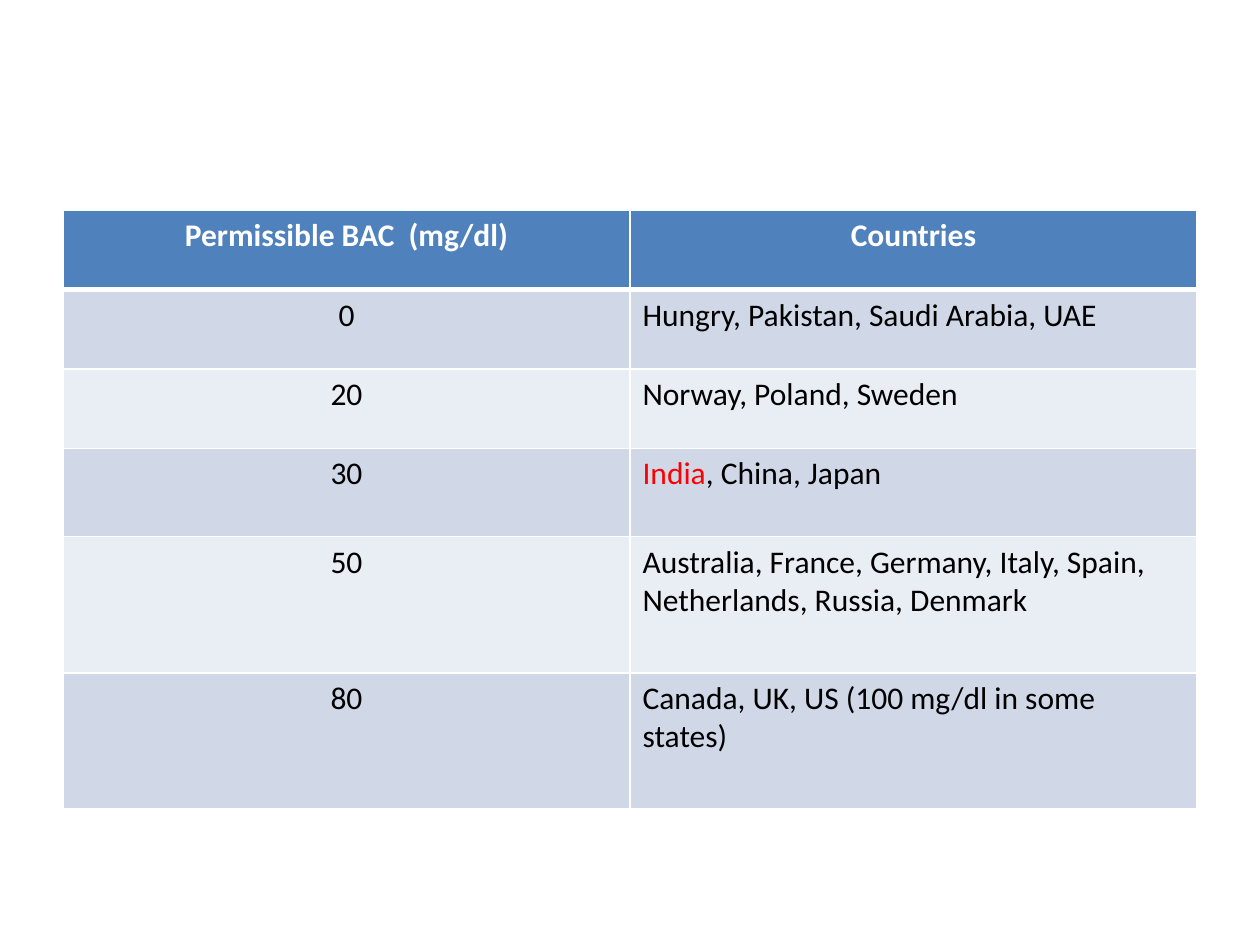
from lxml import etree
from pptx import Presentation
from pptx import util as u
from pptx.dml.color import RGBColor
from pptx.enum import text
from pptx.oxml.ns import qn

WHITE = RGBColor(0xFF, 0xFF, 0xFF)
BLACK = RGBColor(0x00, 0x00, 0x00)
RED = RGBColor(0xFF, 0x00, 0x00)
HEADER_BLUE = RGBColor(0x4F, 0x81, 0xBD)
BANDS = (RGBColor(0xE9, 0xED, 0xF4), RGBColor(0xD0, 0xD8, 0xE8))

HIGHLIGHT = "India"
LIMITS = [
    ("Permissible BAC  (mg/dl)", "Countries"),
    ("0", "Hungry, Pakistan, Saudi Arabia, UAE"),
    ("20", "Norway, Poland, Sweden"),
    ("30", "India, China, Japan"),
    ("50", "Australia, France, Germany, Italy, Spain, Netherlands, Russia, Denmark"),
    ("80", "Canada, UK, US (100 mg/dl in some states)"),
]
ROW_HEIGHTS = (0.63, 0.63, 0.63, 0.7, 1.08, 1.08)
SLIDE_WIDTH, SLIDE_HEIGHT = 10, 7.5
MARGIN, TOP = 0.05 * SLIDE_WIDTH, 1.67


def add_border(cell, side, points):
    """Draw one white edge of a table cell."""
    edge = etree.SubElement(cell._tc.get_or_add_tcPr(), qn(f"a:{side}"), w=str(u.Pt(points)))
    paint = etree.SubElement(edge, qn("a:solidFill"))
    etree.SubElement(paint, qn("a:srgbClr"), val=str(WHITE))


def write(paragraph, wording, color=BLACK, bold=False, size=18, font="Calibri"):
    """Append formatted wording to a paragraph."""
    run = paragraph.add_run()
    run.text = wording
    run.font.name = font
    run.font.size = u.Pt(size)
    run.font.bold = bold
    run.font.color.rgb = color


def fill_cell(cell, wording, row, column):
    """Style one cell by its place in the table and write its wording."""
    header = row == 0
    for side, points in (("lnL", 1), ("lnR", 1),
                         ("lnT", 3 if row == 1 else 1), ("lnB", 3 if header else 1)):
        add_border(cell, side, points)
    cell.fill.solid()
    cell.fill.fore_color.rgb = HEADER_BLUE if header else BANDS[row % 2]
    paragraph = cell.text_frame.paragraphs[0]
    centered = header or column == 0
    paragraph.alignment = text.PP_ALIGN.CENTER if centered else text.PP_ALIGN.LEFT
    if wording.startswith(HIGHLIGHT):
        write(paragraph, HIGHLIGHT, color=RED)
        wording = wording.removeprefix(HIGHLIGHT)
    write(paragraph, wording, color=WHITE if header else BLACK, bold=header)


def main():
    """Build the slide of permissible blood alcohol limits."""
    deck = Presentation()
    deck.slide_width, deck.slide_height = u.Inches(SLIDE_WIDTH), u.Inches(SLIDE_HEIGHT)
    slide = deck.slides.add_slide(deck.slide_layouts.get_by_name("Blank"))
    limits = slide.shapes.add_table(
        len(LIMITS), len(LIMITS[0]), u.Inches(MARGIN), u.Inches(TOP),
        u.Inches(SLIDE_WIDTH - 2 * MARGIN), u.Inches(sum(ROW_HEIGHTS))).table
    for row, (height, entries) in enumerate(zip(ROW_HEIGHTS, LIMITS)):
        limits.rows[row].height = u.Inches(height)
        for column, wording in enumerate(entries):
            fill_cell(limits.cell(row, column), wording, row, column)
    deck.save("out.pptx")


if __name__ == "__main__":
    main()
